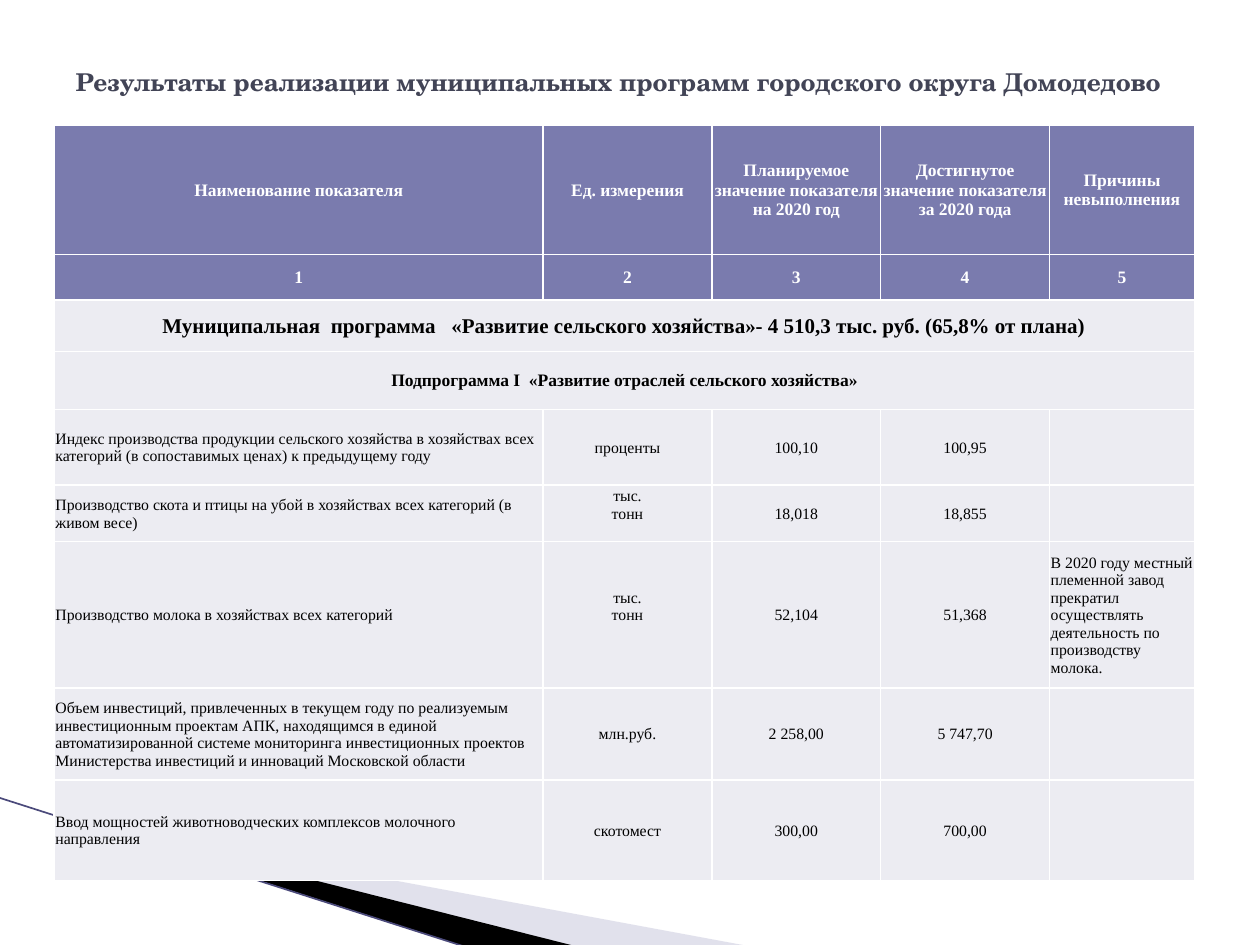
"""Build a slide with the results of the farming programme."""
import dataclasses

import lxml.etree
import pptx
import pptx.dml.color
import pptx.enum.shapes
import pptx.enum.text
import pptx.oxml.ns
import pptx.util

Inches = pptx.util.Inches
Pt = pptx.util.Pt
qn = pptx.oxml.ns.qn
Align = pptx.enum.text.PP_ALIGN
Middle = pptx.enum.text.MSO_ANCHOR.MIDDLE


@dataclasses.dataclass(frozen=True)
class Theme:
    """Colours, fonts and type sizes."""
    title: str = "424456"
    head: str = "7A7BAE"
    body: str = "ECECF2"
    light: str = "FFFFFF"
    dark: str = "000000"
    pale: str = "B6B6D1"
    line: str = "4B4A7B"
    serif: str = "TeX Gyre Schola"
    text: str = "Times New Roman"
    large: float = 14
    mid: float = 12
    small: float = 10
    tiny: float = 9


@dataclasses.dataclass(frozen=True)
class Row:
    """One table row with its look; a single text spans all columns."""
    height: float
    texts: tuple
    size: float
    bold: bool = False
    head: bool = False


@dataclasses.dataclass(frozen=True)
class Wedge:
    """A filled outline at the foot of the slide."""
    points: tuple
    color: str
    alpha: int = 100


THEME = Theme()
TITLE = "Результаты реализации муниципальных программ городского округа Домодедово"
COLS = (3.88, 1.34, 1.34, 1.34, 1.15)
ROWS = (
    Row(1.03, ("Наименование показателя", "Ед. измерения",
               "Планируемое значение показателя на 2020 год",
               "Достигнутое значение показателя за 2020 года",
               "Причины невыполнения"), THEME.small, True, True),
    Row(0.36, ("1", "2", "3", "4", "5"), THEME.small, True, True),
    Row(0.41, ("Муниципальная  программа   «Развитие сельского хозяйства»- "
               "4 510,3 тыс. руб. (65,8% от плана)",), THEME.mid, True),
    Row(0.46, ("Подпрограмма I  «Развитие отраслей сельского хозяйства»",),
        THEME.small, True),
    Row(0.6, ("Индекс производства продукции сельского хозяйства в хозяйствах "
              "всех категорий (в сопоставимых ценах) к предыдущему году",
              "проценты", "100,10", "100,95", ""), THEME.tiny),
    Row(0.45, ("Производство скота и птицы на убой в хозяйствах всех категорий "
               "(в живом весе)", "тыс.\vтонн", "18,018", "18,855", ""), THEME.tiny),
    Row(1.16, ("Производство молока в хозяйствах всех категорий",
               "тыс.\vтонн", "52,104", "51,368",
               "В 2020 году местный племенной завод прекратил осуществлять "
               "деятельность по производству молока."), THEME.tiny),
    Row(0.73, ("Объем инвестиций, привлеченных в текущем году по реализуемым "
               "инвестиционным проектам АПК, находящимся в единой "
               "автоматизированной системе мониторинга инвестиционных проектов "
               "Министерства инвестиций и инноваций Московской области",
               "млн.руб.", "2 258,00", "5 747,70", ""), THEME.tiny),
    Row(0.8, ("Ввод мощностей животноводческих комплексов молочного направления",
              "скотомест", "300,00", "700,00", ""), THEME.tiny),
)
WEDGES = (
    Wedge(((0.55, 6.51), (5.95, 7.51), (4.56, 7.51), (0.55, 6.5)), THEME.pale, 40),
    Wedge(((0.53, 6.49), (4.57, 7.51), (3.72, 7.52), (0.54, 6.5)), THEME.dark),
)


def rgb(code: str) -> pptx.dml.color.RGBColor:
    """Turn a hex code into a colour."""
    return pptx.dml.color.RGBColor.from_string(code)


def style(para, face: str, size: float, color: str, bold: bool, align) -> None:
    """Set the font and alignment of a paragraph."""
    para.alignment = align
    font = para.font
    font.name, font.size, font.bold = face, Pt(size), bold
    font.color.rgb = rgb(color)


def add_wedge(slide, wedge: Wedge) -> None:
    """Draw a wedge as a freeform."""
    start, *rest = [(Inches(x), Inches(y)) for x, y in wedge.points]
    pen = slide.shapes.build_freeform(*start)
    pen.add_line_segments(rest, close=True)
    shape = pen.convert_to_shape()
    shape.shadow.inherit = False
    shape.line.fill.background()
    shape.fill.solid()
    shape.fill.fore_color.rgb = rgb(wedge.color)
    if wedge.alpha < 100:
        tint = shape.fill._xPr.find(".//" + qn("a:srgbClr"))
        lxml.etree.SubElement(tint, qn("a:alpha"), val=str(wedge.alpha * 1000))


def add_line(slide) -> None:
    """Draw the thin slanted line."""
    line = slide.shapes.add_connector(
        pptx.enum.shapes.MSO_CONNECTOR.STRAIGHT,
        Inches(-0.01), Inches(6.33), Inches(3.71), Inches(7.52))
    line.line.color.rgb = rgb(THEME.line)
    line.line.width = Pt(0.95)
    lxml.etree.SubElement(line._element.spPr, qn("a:effectLst"))


def add_title(slide) -> None:
    """Place and fill the title."""
    title = slide.shapes.title
    title.left, title.top = Inches(0.5), Inches(0.3)
    title.width, title.height = Inches(9), Inches(0.69)
    frame = title.text_frame
    frame.text = TITLE
    frame.vertical_anchor = Middle
    style(frame.paragraphs[0], THEME.serif, THEME.large, THEME.title, True, Align.LEFT)


def add_edges(cell) -> None:
    """Give a cell light borders on all sides."""
    props = cell._tc.get_or_add_tcPr()
    for side in ("L", "R", "T", "B"):
        edge = lxml.etree.SubElement(props, qn("a:ln" + side), w=str(Pt(1)))
        fill = lxml.etree.SubElement(edge, qn("a:solidFill"))
        lxml.etree.SubElement(fill, qn("a:srgbClr"), val=THEME.light)


def fill_cell(cell, row: Row, text: str, left: bool) -> None:
    """Write and format one cell."""
    add_edges(cell)
    cell.fill.solid()
    cell.fill.fore_color.rgb = rgb(THEME.head if row.head else THEME.body)
    cell.vertical_anchor = Middle
    cell.margin_left = cell.margin_right = cell.margin_top = Inches(0.01)
    cell.margin_bottom = Inches(0.14 if "\v" in text else 0)
    cell.text_frame.text = text
    style(cell.text_frame.paragraphs[0], THEME.text, row.size,
          THEME.light if row.head else THEME.dark, row.bold,
          Align.LEFT if left else Align.CENTER)


def add_table(slide) -> None:
    """Draw the table of results."""
    table = slide.shapes.add_table(
        len(ROWS), len(COLS), Inches(0.43), Inches(0.99), Inches(sum(COLS)),
        Inches(sum(row.height for row in ROWS))).table
    table.first_row = table.horz_banding = False
    for col, width in zip(table.columns, COLS):
        col.width = Inches(width)
    last = len(COLS) - 1
    for i, row in enumerate(ROWS):
        table.rows[i].height = Inches(row.height)
        span = len(row.texts) == 1
        texts = row.texts + ("",) * (len(COLS) - len(row.texts))
        for j, text in enumerate(texts):
            fill_cell(table.cell(i, j), row, text, not row.bold and j in (0, last))
        if span:
            table.cell(i, 0).merge(table.cell(i, last))


def main() -> None:
    """Build and save the slide."""
    deck = pptx.Presentation()
    deck.slide_width, deck.slide_height = Inches(10), Inches(7.5)
    slide = deck.slides.add_slide(deck.slide_layouts[5])
    for wedge in WEDGES:
        add_wedge(slide, wedge)
    add_line(slide)
    add_title(slide)
    add_table(slide)
    deck.save("out.pptx")


if __name__ == "__main__":
    main()
